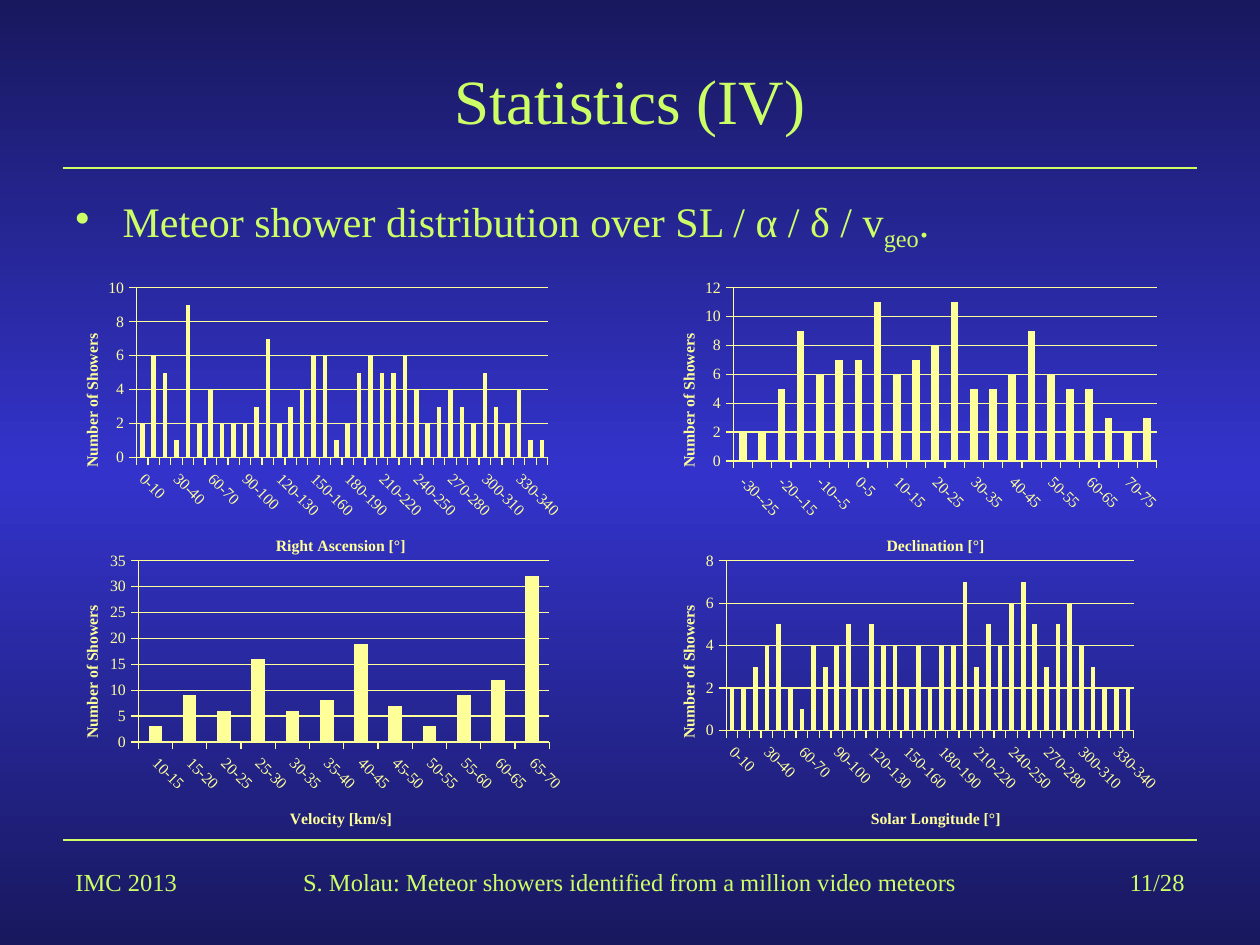
from copy import deepcopy

from lxml import etree
from pptx import Presentation
from pptx.chart.data import CategoryChartData
from pptx.dml.color import RGBColor
from pptx.enum import chart as ch, shapes, text
from pptx.oxml import ns, parse_xml
from pptx.util import Pt

FONT = "Times New Roman"
LIME, YELLOW = "CCFF66", "FFFF99"
BACKGROUND = [(0, "18185E"), (0.5, "3333CC"), (1, "18185E")]
RULES = [96, 480]
LEFT, CENTER, RIGHT = text.PP_ALIGN.LEFT, text.PP_ALIGN.CENTER, text.PP_ALIGN.RIGHT
TEXTS = [
    ("Statistics (IV)", (36, 30, 648, 54), 36, CENTER),
    ("IMC 2013", (36, 492, 120, 36), 14, LEFT),
    ("S. Molau: Meteor showers identified from a million video meteors",
     (162, 492, 396, 36), 14, CENTER),
    ("11/28", (564, 492, 120, 36), 14, RIGHT),
]
BULLET = [("Meteor shower distribution over SL / α / δ / v", 0), ("geo", -25000), (".", 0)]


def ranges(start, stop, step):
    return [f"{a}-{a + step}" for a in range(start, stop, step)]


CHART_W, CHART_H = 300, 173
CHARTS = [
    dict(title="Right Ascension [°]", at=(28, 156), plot=(78, 164.5, 235, 97),
         x_title=(156, 304), y_title=(45, 189), top=10, unit=2, skip=3,
         cats=ranges(0, 360, 10),
         vals=[2, 6, 5, 1, 9, 2, 4, 2, 2, 2, 3, 7, 2, 3, 4, 6, 6, 1,
               2, 5, 6, 5, 5, 6, 4, 2, 3, 4, 3, 2, 5, 3, 2, 4, 1, 1]),
    dict(title="Declination [°]", at=(369, 156), plot=(419, 164.5, 242, 99),
         x_title=(505, 304), y_title=(386, 189), top=12, unit=2, skip=2,
         cats=ranges(-30, 80, 5),
         vals=[2, 2, 5, 9, 6, 7, 7, 11, 6, 7, 8, 11, 5, 5, 6, 9, 6, 5, 5, 3, 2, 3]),
    dict(title="Velocity [km/s]", at=(28, 312), plot=(79, 320.5, 235, 103.5),
         x_title=(164, 460), y_title=(45, 344), top=35, unit=5, skip=1,
         cats=ranges(10, 70, 5),
         vals=[3, 9, 6, 16, 6, 8, 19, 7, 3, 9, 12, 32]),
    dict(title="Solar Longitude [°]", at=(369, 312), plot=(415, 320.5, 233, 97),
         x_title=(496, 460), y_title=(386, 344), top=8, unit=2, skip=3,
         cats=ranges(0, 340, 10) + ["350-360"],
         vals=[2, 2, 3, 4, 5, 2, 1, 4, 3, 4, 5, 2, 5, 4, 4, 2, 4, 2,
               4, 4, 7, 3, 5, 4, 6, 7, 5, 3, 5, 6, 4, 3, 2, 2, 2]),
]


def rgb(value):
    return RGBColor.from_string(value)


def style(font, size, color, bold=False):
    font.name, font.size, font.bold = FONT, Pt(size), bold
    font.color.rgb = rgb(color)


def text_box(s, box, anchor):
    tf = s.shapes.add_textbox(*map(Pt, box)).text_frame
    tf.word_wrap = True
    tf.vertical_anchor = anchor
    return tf.paragraphs[0]


def add_run(p, words, size):
    r = p.add_run()
    r.text = words
    style(r.font, size, LIME)
    return r


def layout(spec, box, inner=False):
    x, y = spec["at"]
    values = [("x", (box[0] - x) / CHART_W), ("y", (box[1] - y) / CHART_H)]
    if inner:
        values += [("w", box[2] / CHART_W), ("h", box[3] / CHART_H)]
    parts = '<c:layoutTarget val="inner"/>' if inner else ""
    parts += "".join(f'<c:{k}Mode val="edge"/>' for k in "xy")
    parts += "".join(f'<c:{k} val="{v:.4f}"/>' for k, v in values)
    return parse_xml(f'<c:layout {ns.nsdecls("c")}><c:manualLayout>{parts}'
                     '</c:manualLayout></c:layout>')


def place(parent, new, after=None):
    for old in parent.findall(ns.qn("c:layout")):
        parent.remove(old)
    if after is None:
        parent.insert(0, new)
    else:
        parent.find(ns.qn(after)).addnext(new)


def axis_style(axis, title, spec, title_box):
    axis.major_tick_mark = ch.XL_TICK_MARK.OUTSIDE
    axis.minor_tick_mark = ch.XL_TICK_MARK.NONE
    axis.format.line.color.rgb = rgb(YELLOW)
    axis.format.line.width = Pt(0.75)
    style(axis.tick_labels.font, 9, YELLOW)
    r = axis.axis_title.text_frame.paragraphs[0].add_run()
    r.text = title
    style(r.font, 9, YELLOW, True)
    place(axis.axis_title._element, layout(spec, title_box), "c:tx")


def add_column_chart(s, spec):
    data = CategoryChartData()
    data.categories = spec["cats"]
    data.add_series("Series 1", spec["vals"])
    chart = s.shapes.add_chart(ch.XL_CHART_TYPE.COLUMN_CLUSTERED,
                               *map(Pt, spec["at"] + (CHART_W, CHART_H)), data).chart
    chart.has_legend = chart.has_title = False
    style(chart.font, 9, YELLOW)
    plot = chart.plots[0]
    plot.gap_width, plot.vary_by_categories = 150, False
    fill = plot.series[0].format.fill
    fill.solid()
    fill.fore_color.rgb = rgb(YELLOW)

    x_axis, y_axis = chart.category_axis, chart.value_axis
    axis_style(x_axis, spec["title"], spec, spec["x_title"])
    axis_style(y_axis, "Number of Showers", spec, spec["y_title"])
    y_axis.minimum_scale, y_axis.maximum_scale = 0, spec["top"]
    y_axis.major_unit = spec["unit"]
    y_axis.has_major_gridlines = True
    grid = y_axis.major_gridlines.format.line
    grid.color.rgb = rgb(YELLOW)
    grid.width = Pt(0.75)
    y_axis.axis_title.text_frame._txBody.bodyPr.set("rot", "-5400000")
    x_axis._element.find(".//" + ns.qn("c:txPr")).bodyPr.set("rot", "2700000")
    skip = parse_xml(f'<c:tickLblSkip {ns.nsdecls("c")} val="{spec["skip"]}"/>')
    x_axis._element.find(ns.qn("c:lblOffset")).addnext(skip)
    place(chart._chartSpace.chart.plotArea, layout(spec, spec["plot"], True))


def main():
    prs = Presentation()
    prs.slide_width, prs.slide_height = Pt(720), Pt(540)
    s = prs.slides.add_slide(prs.slide_layouts[6])

    fill = s.background.fill
    fill.gradient()
    fill.gradient_angle = 90
    stops = s._element.find(".//" + ns.qn("a:gsLst"))
    stops.append(deepcopy(stops[0]))
    for stop, (position, color) in zip(fill.gradient_stops, BACKGROUND):
        stop.position = position
        stop.color.rgb = rgb(color)

    for y in RULES:
        line = s.shapes.add_connector(shapes.MSO_CONNECTOR.STRAIGHT,
                                      Pt(36), Pt(y), Pt(684), Pt(y))
        line.line.color.rgb = rgb(LIME)
        line.line.width = Pt(0.75)
        etree.SubElement(line._element.spPr, ns.qn("a:effectLst"))

    for words, box, size, align in TEXTS:
        anchor = text.MSO_ANCHOR.MIDDLE if size == 36 else text.MSO_ANCHOR.TOP
        p = text_box(s, box, anchor)
        p.alignment = align
        add_run(p, words, size)

    p = text_box(s, (36, 108, 648, 57), text.MSO_ANCHOR.TOP)
    p.space_before = Pt(5)
    pPr = p._p.get_or_add_pPr()
    pPr.set("marL", str(Pt(27)))
    pPr.set("indent", str(-Pt(27)))
    etree.SubElement(pPr, ns.qn("a:buChar")).set("char", "•")
    for words, baseline in BULLET:
        r = add_run(p, words, 24)
        if baseline:
            r.font._element.set("baseline", str(baseline))

    for spec in CHARTS:
        add_column_chart(s, spec)

    prs.save("out.pptx")


if __name__ == "__main__":
    main()
